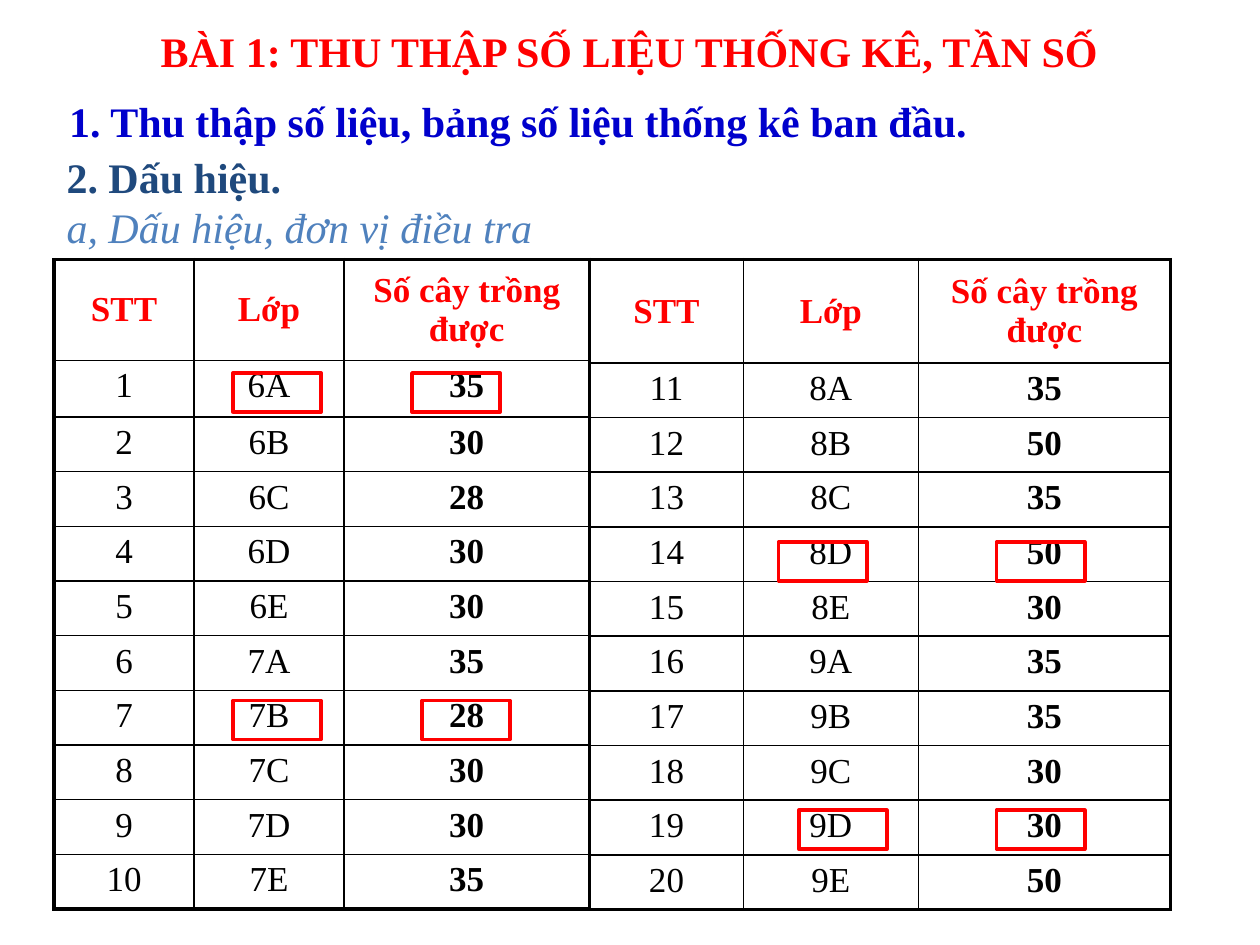
from lxml.etree import SubElement
from pptx import Presentation
from pptx.dml.color import RGBColor
from pptx.enum.shapes import MSO_SHAPE as Shape
from pptx.enum.text import MSO_ANCHOR as Anchor, MSO_AUTO_SIZE as AutoSize, PP_ALIGN as Align
from pptx.oxml import parse_xml
from pptx.oxml.ns import nsdecls, qn
from pptx.util import Inches, Pt

FONT = "Times New Roman"
RED, BLUE, NAVY, STEEL, BLACK = "FF0000", "0000CC", "1F497D", "4F81BD", "000000"
THIN, THICK = 1, 2.25
HEADERS = ("STT", "Lớp", "Số cây trồng được")
TABLE_TOP = 2.06
MARK_SIZE = (0.7, 0.31)
MARK_ROWS = {2.96: (1.85, 3.27), 5.56: (1.85, 3.35), 4.3: (6.18, 7.91), 6.43: (6.34, 7.91)}


def color(hex_code):
    """Turn a hex string into a colour."""
    return RGBColor.from_string(hex_code)


def place(shape, left, top, width, height):
    """Move and size a shape, in inches."""
    shape.left, shape.top = Inches(left), Inches(top)
    shape.width, shape.height = Inches(width), Inches(height)


def style(paragraph, size, hex_code, bold=False, italic=False):
    """Format the font of a whole paragraph."""
    font = paragraph.font
    font.name, font.size, font.bold, font.italic = FONT, Pt(size), bold, italic
    font.color.rgb = color(hex_code)


def add_title(slide, text):
    """Fill the title placeholder."""
    title = slide.shapes.title
    place(title, 0.27, 0.05, 9.45, 0.7)
    frame = title.text_frame
    frame.text = text
    frame.vertical_anchor = Anchor.MIDDLE
    frame.paragraphs[0].alignment = Align.CENTER
    style(frame.paragraphs[0], 24, RED, bold=True)


def add_heading(slide, box, lines):
    """Add a text box of (text, colour, bold, italic) lines."""
    frame = slide.shapes.add_textbox(*map(Inches, box)).text_frame
    frame.word_wrap = True
    frame.text = "\n".join(line[0] for line in lines)
    for paragraph, (_, hex_code, bold, italic) in zip(frame.paragraphs, lines):
        style(paragraph, 24, hex_code, bold, italic)
    return frame


def set_borders(cell, widths):
    """Draw the left, right, top and bottom borders of a cell."""
    properties = cell._tc.get_or_add_tcPr()
    for index, (side, width) in enumerate(zip("LRTB", widths)):
        properties.insert(index, parse_xml(
            f'<a:ln{side} {nsdecls("a")} w="{Pt(width)}"><a:solidFill>'
            f'<a:srgbClr val="{BLACK}"/></a:solidFill></a:ln{side}>'))


def fill_cell(cell, text, hex_code, bold):
    """Write centred text into an unfilled cell."""
    cell.text = text
    cell.fill.background()
    paragraph = cell.text_frame.paragraphs[0]
    paragraph.alignment = Align.CENTER
    spacing = SubElement(paragraph._p.get_or_add_pPr(), qn("a:spcBef"))
    SubElement(spacing, qn("a:spcPct")).set("val", "20000")
    style(paragraph, 20, hex_code, bold)


def add_tree_table(slide, left, col_widths, row_heights, records):
    """Add one half of the class table."""
    rows = [HEADERS, *records]
    last_row, last_col = len(rows) - 1, len(HEADERS) - 1
    size = (sum(col_widths), sum(row_heights))
    frame = slide.shapes.add_table(
        len(rows), len(HEADERS), *map(Inches, (left, TABLE_TOP, *size)))
    table = frame.table
    table.first_row = table.horz_banding = False
    for column, width in zip(table.columns, col_widths):
        column.width = Inches(width)
    for r, (row, height, values) in enumerate(zip(table.rows, row_heights, rows)):
        row.height = Inches(height)
        for c, (cell, value) in enumerate(zip(row.cells, values)):
            header = r == 0
            fill_cell(cell, value, RED if header else BLACK, header or c == last_col)
            if header:
                cell.vertical_anchor = Anchor.MIDDLE
            outer = (c == 0, c == last_col, header, r == last_row)
            set_borders(cell, [THICK if edge else THIN for edge in outer])


def class_records(first_number, grades, counts):
    """Number the classes A to E of each grade and add their tree counts."""
    classes = [f"{grade}{letter}" for grade in grades for letter in "ABCDE"]
    return [(str(number), name, str(count))
            for number, (name, count) in enumerate(zip(classes, counts), first_number)]


def add_mark(slide, left, top):
    """Add a red frame that marks a value."""
    mark = slide.shapes.add_shape(Shape.RECTANGLE, *map(Inches, (left, top, *MARK_SIZE)))
    mark.shadow.inherit = False
    mark.fill.background()
    mark.line.color.rgb = color(RED)
    mark.line.width = Pt(2)


def main():
    """Build the slide and save it."""
    deck = Presentation()
    deck.slide_width, deck.slide_height = Inches(10), Inches(7.5)
    slide = deck.slides.add_slide(deck.slide_layouts[5])
    add_title(slide, "BÀI 1: THU THẬP SỐ LIỆU THỐNG KÊ, TẦN SỐ")

    collecting = add_heading(slide, (0.35, 0.75, 9, 0.58), [
        ("1. Thu thập số liệu, bảng số liệu thống kê ban đầu.", BLUE, True, False)])
    paragraph = collecting.paragraphs[0]
    paragraph.line_spacing = 0.9
    paragraph.space_before, paragraph.space_after = Pt(12), Pt(2)
    paragraph._p.get_or_add_pPr().set("marL", str(Inches(0.1)))

    signs = add_heading(slide, (0.43, 1.15, 7.76, 0.91), [
        ("2. Dấu hiệu.", NAVY, True, False),
        ("a, Dấu hiệu, đơn vị điều tra", STEEL, False, True)])
    signs.auto_size = AutoSize.SHAPE_TO_FIT_TEXT

    left_heights = [0.8, 0.45] + [(5.15 - 0.8 - 0.45) / 9] * 9
    right_heights = [0.82] + [(5.16 - 0.82) / 10] * 10
    add_tree_table(slide, 0.43, (1.11, 1.19, 1.95), left_heights,
                   class_records(1, (6, 7), (35, 30, 28, 30, 30, 35, 28, 30, 30, 35)))
    add_tree_table(slide, 4.68, (1.22, 1.39, 2), right_heights,
                   class_records(11, (8, 9), (35, 50, 35, 50, 30, 35, 35, 30, 30, 50)))

    for top, lefts in MARK_ROWS.items():
        for left in lefts:
            add_mark(slide, left, top)
    deck.save("out.pptx")


if __name__ == "__main__":
    main()
